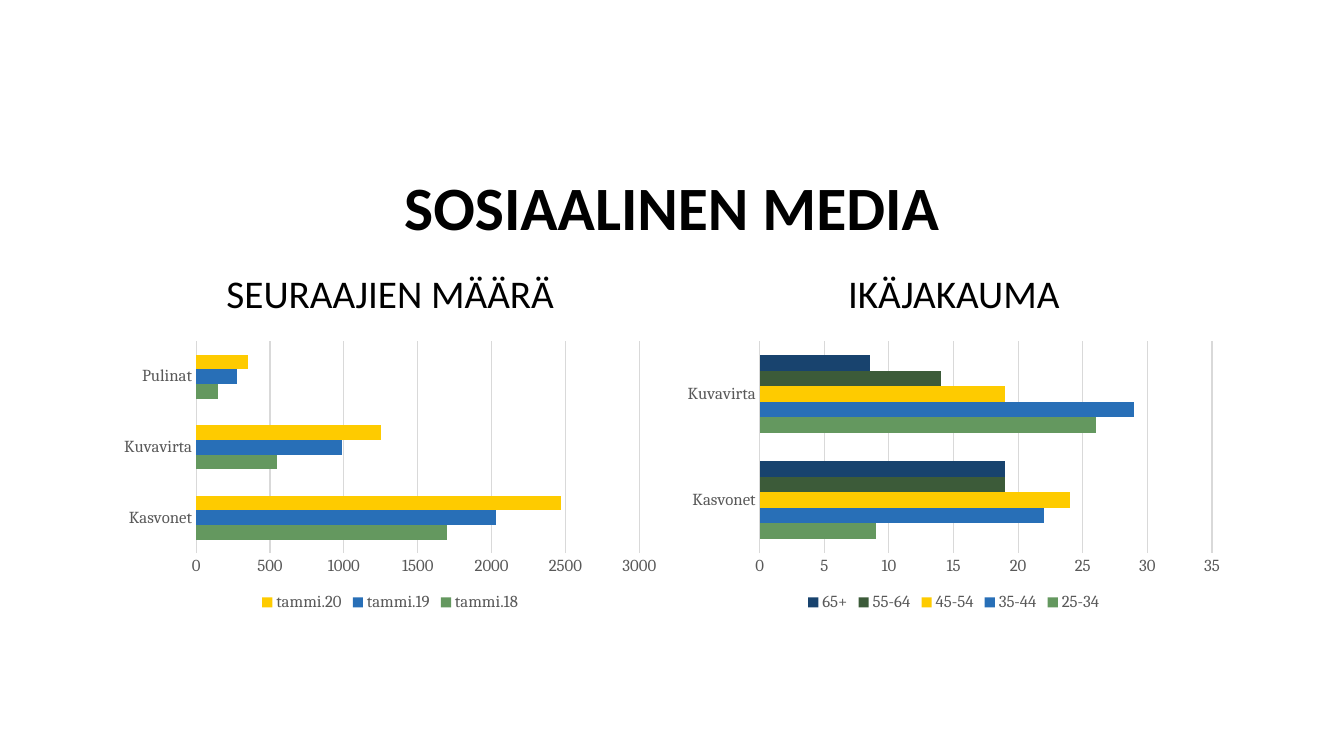
from pptx import Presentation
from pptx.chart.data import CategoryChartData
from pptx.dml.color import RGBColor
from pptx.enum import chart as chart_enum, text as text_enum
from pptx.util import Inches, Pt

COLORS = {
    "text": "000000",
    "label": "595959",
    "grid": "D9D9D9",
    "green": "64985F",
    "blue": "286FB7",
    "yellow": "FECB00",
    "dark green": "3C5B39",
    "navy": "18436E",
}
LEFT, COLUMN_WIDTH, COLUMN_STEP = 1.12, 5.5, 5.59

PANELS = [
    ("SEURAAJIEN MÄÄRÄ", ["Kasvonet", "Kuvavirta", "Pulinat"], [
        ("tammi.18", [1700, 550, 150], "green"),
        ("tammi.19", [2030, 990, 280], "blue"),
        ("tammi.20", [2470, 1250, 350], "yellow"),
    ]),
    ("IKÄJAKAUMA", ["Kasvonet", "Kuvavirta"], [
        ("25-34", [9, 26], "green"),
        ("35-44", [22, 29], "blue"),
        ("45-54", [24, 19], "yellow"),
        ("55-64", [19, 14], "dark green"),
        ("65+", [19, 8.5], "navy"),
    ]),
]


def style_font(font, name, size, color):
    font.name = name
    font.size = Pt(size)
    font.color.rgb = RGBColor.from_string(COLORS[color])


def add_heading(slide, words, box, size, anchor, bold=False):
    """Add a centred one-line heading; box is left, top, width, height in inches."""
    shape = slide.shapes.add_textbox(*map(Inches, box))
    frame = shape.text_frame
    frame.word_wrap = True
    frame.vertical_anchor = anchor
    paragraph = frame.paragraphs[0]
    paragraph.alignment = text_enum.PP_ALIGN.CENTER
    paragraph.line_spacing = 0.9
    run = paragraph.add_run()
    run.text = words
    run.font.bold = bold
    style_font(run.font, "Calibri", size, "text")


presentation = Presentation()
presentation.slide_width = Inches(13.33)
presentation.slide_height = Inches(7.5)
slide = presentation.slides.add_slide(presentation.slide_layouts[6])

add_heading(slide, "SOSIAALINEN MEDIA", (LEFT, 0.97, COLUMN_STEP + COLUMN_WIDTH, 1.5),
            44, text_enum.MSO_ANCHOR.BOTTOM, bold=True)

for column, (heading, channels, groups) in enumerate(PANELS):
    left = LEFT + column * COLUMN_STEP
    add_heading(slide, heading, (left, 2.55, COLUMN_WIDTH, 0.77),
                28, text_enum.MSO_ANCHOR.MIDDLE)

    data = CategoryChartData()
    data.categories = channels
    for name, values, _ in groups:
        data.add_series(name, values)
    chart = slide.shapes.add_chart(
        chart_enum.XL_CHART_TYPE.BAR_CLUSTERED, Inches(left), Inches(3.33),
        Inches(COLUMN_WIDTH), Inches(2.78), data).chart
    style_font(chart.font, "Cambria", 10, "text")
    chart.has_title = False

    chart.has_legend = True
    chart.legend.position = chart_enum.XL_LEGEND_POSITION.BOTTOM
    chart.legend.include_in_layout = False
    style_font(chart.legend.font, "Cambria", 12, "label")

    plot = chart.plots[0]
    plot.vary_by_categories = False
    plot.gap_width = 182
    for series, (_, _, color) in zip(plot.series, groups):
        series.format.fill.solid()
        series.format.fill.fore_color.rgb = RGBColor.from_string(COLORS[color])

    for axis in (chart.category_axis, chart.value_axis):
        axis.major_tick_mark = chart_enum.XL_TICK_MARK.NONE
        axis.minor_tick_mark = chart_enum.XL_TICK_MARK.NONE
        style_font(axis.tick_labels.font, "Cambria", 12, "label")
    chart.value_axis.format.line.fill.background()
    chart.value_axis.has_major_gridlines = True
    for line in (chart.category_axis.format.line,
                 chart.value_axis.major_gridlines.format.line):
        line.width = Pt(0.75)
        line.color.rgb = RGBColor.from_string(COLORS["grid"])

presentation.save("out.pptx")
